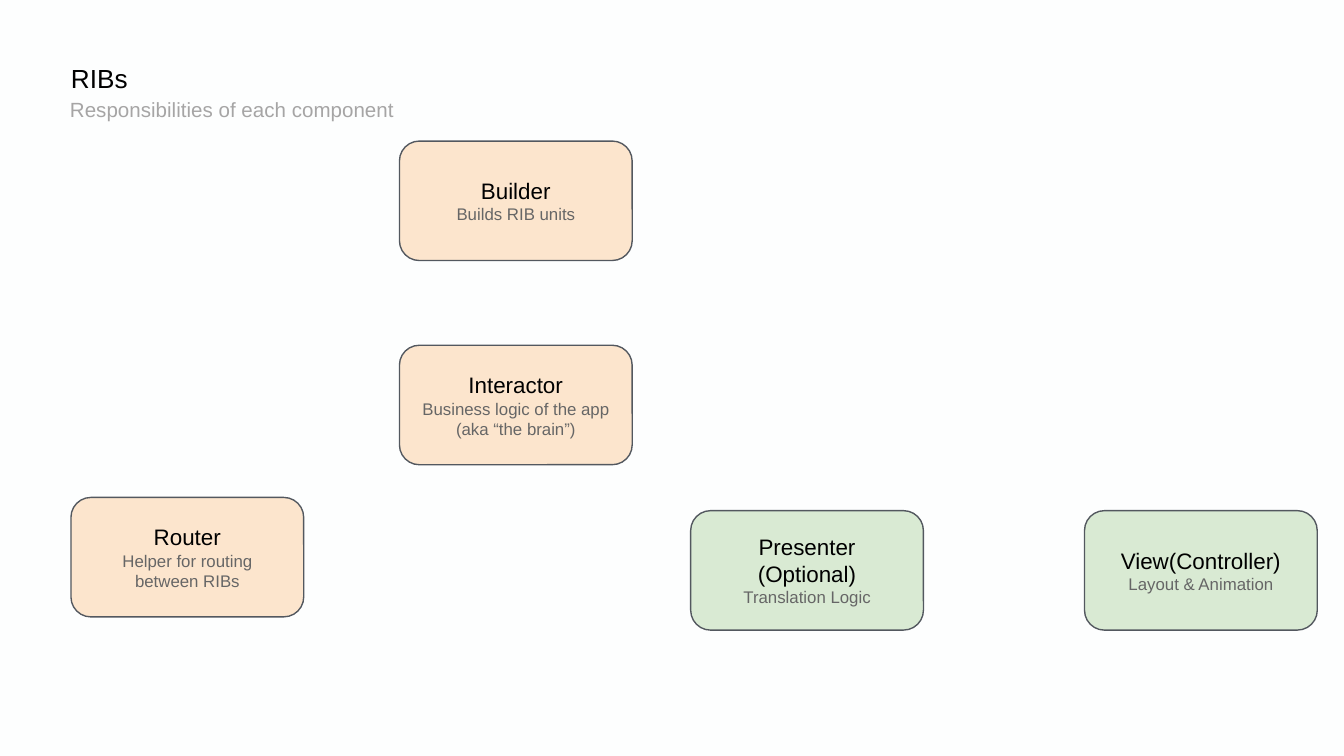
from pptx import Presentation
from pptx.dml.color import RGBColor
from pptx.enum.shapes import MSO_SHAPE
from pptx.enum.text import MSO_ANCHOR, MSO_AUTO_SIZE, PP_ALIGN
from pptx.util import Pt


def color(hex_value):
    return RGBColor.from_string(hex_value)


def write(paragraph, text, size, hex_value, align):
    paragraph.alignment = align
    run = paragraph.add_run()
    run.text = text
    run.font.name = "Arial"
    run.font.size = Pt(size)
    run.font.color.rgb = color(hex_value)


deck = Presentation()
deck.slide_width, deck.slide_height = Pt(720), Pt(405)
slide = deck.slides.add_slide(deck.slide_layouts[5])
slide.background.fill.solid()
slide.background.fill.fore_color.rgb = color("FDFEFE")

heading = slide.shapes.title
subheading = slide.shapes.add_textbox(0, 0, 0, 0)
heading_format = {
    "margin_left": 0, "margin_top": 0, "margin_right": 0, "margin_bottom": 0,
    "vertical_anchor": MSO_ANCHOR.TOP, "word_wrap": True,
    "auto_size": MSO_AUTO_SIZE.NONE,
}
for box, text, left, top, height, size, ink in [
    (heading, "RIBs", 38, 35.3, 14.4, 14, "000000"),
    (subheading, "Responsibilities of each component", 37.5, 53.3, 11.5, 11, "A6A5A5"),
]:
    box.left, box.top, box.width, box.height = Pt(left), Pt(top), Pt(643.7), Pt(height)
    for name, value in heading_format.items():
        setattr(box.text_frame, name, value)
    line = box.text_frame.paragraphs[0]
    line.line_spacing = 0.9
    write(line, text, size, ink, PP_ALIGN.LEFT)

ORANGE, GREEN = "FCE5CD", "D9EAD3"
component_format = {
    "margin_left": Pt(7.2), "margin_top": Pt(7.2),
    "margin_right": Pt(7.2), "margin_bottom": Pt(7.2),
    "vertical_anchor": MSO_ANCHOR.MIDDLE, "word_wrap": True,
}
for role, duty, left, top, fill in [
    ("Interactor", "Business logic of the app (aka “the brain”)", 214, 185, ORANGE),
    ("Router", "Helper for routing between RIBs", 38, 266.5, ORANGE),
    ("Builder", "Builds RIB units", 214, 75.6, ORANGE),
    ("View(Controller)", "Layout & Animation", 581, 273.6, GREEN),
    ("Presenter (Optional)", "Translation Logic", 370, 273.6, GREEN),
]:
    component = slide.shapes.add_shape(
        MSO_SHAPE.ROUNDED_RECTANGLE, Pt(left), Pt(top), Pt(124.7), Pt(64))
    component.shadow.inherit = False
    component.fill.solid()
    component.fill.fore_color.rgb = color(fill)
    component.line.color.rgb = color("53585F")
    component.line.width = Pt(0.75)
    frame = component.text_frame
    for name, value in component_format.items():
        setattr(frame, name, value)
    write(frame.paragraphs[0], role, 12, "000000", PP_ALIGN.CENTER)
    write(frame.add_paragraph(), duty, 9, "666666", PP_ALIGN.CENTER)

deck.save("out.pptx")
